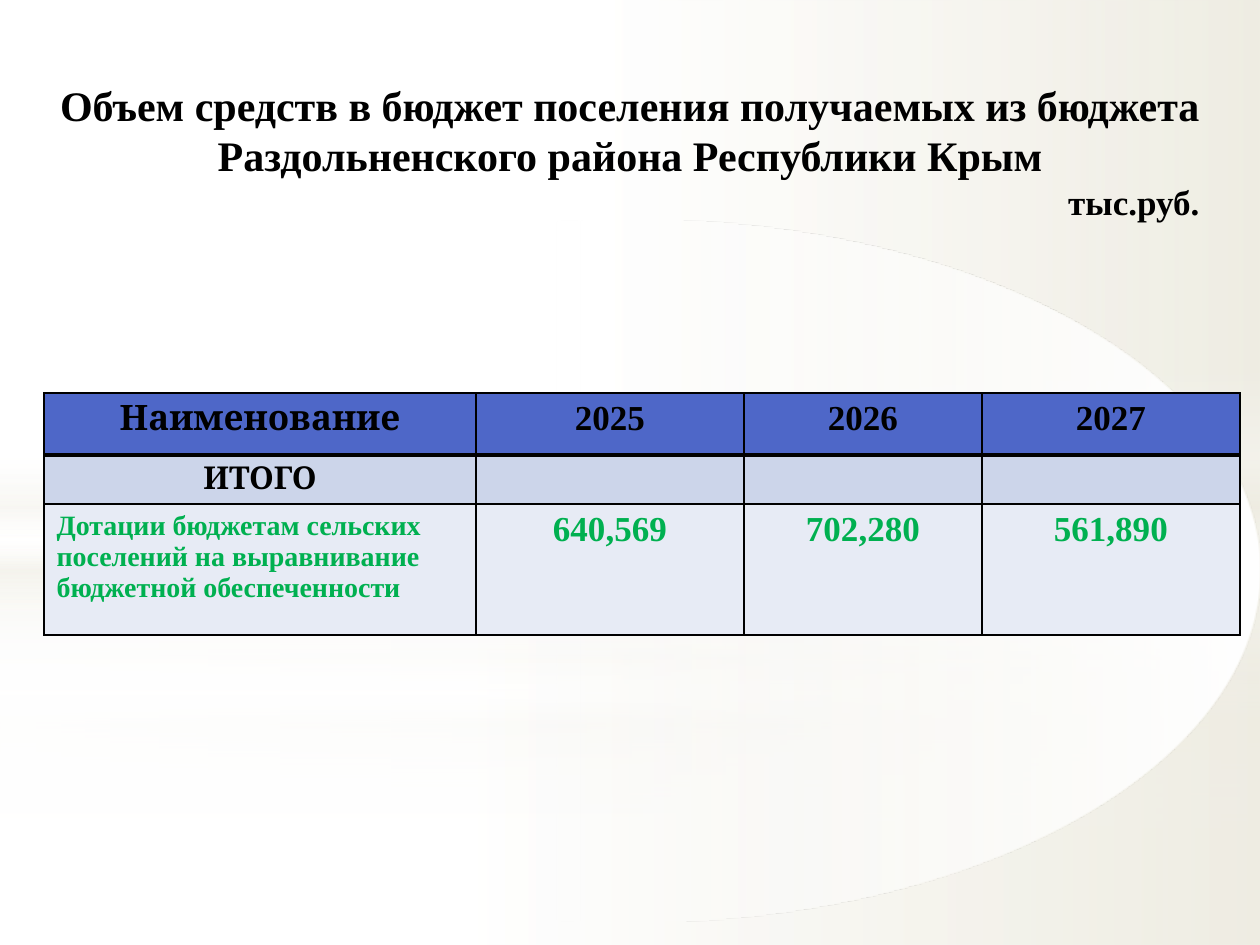
import pptx
import pptx.util
import pptx.dml.color
import pptx.enum.shapes
import pptx.enum.text
import pptx.oxml
import pptx.oxml.ns
from dataclasses import dataclass
from lxml import etree

SCALE = 914400 // 126  # EMU in one px
ALIGN = pptx.enum.text.PP_ALIGN
SHAPE = pptx.enum.shapes.MSO_SHAPE


@dataclass(frozen=True)
class Theme:
    white: str = "FFFFFF"
    cream: str = "EEECE1"
    ink: str = "000000"
    green: str = "00B050"
    header_fill: str = "4E67C8"
    total_fill: str = "CCD5EA"
    grant_fill: str = "E7EBF5"
    serif: str = "Times New Roman"
    label_font: str = "Cambria"
    title_size: int = 24
    value_size: int = 20
    total_size: int = 18
    grant_size: int = 16
    thin: float = 0.96
    thick: float = 3


THEME = Theme()


def px(length):
    return pptx.util.Emu(length * SCALE)


def rgb(value):
    return pptx.dml.color.RGBColor.from_string(value)


def style_runs(paragraph, size, color, font):
    for run in paragraph.runs:
        run.font.size = pptx.util.Pt(size)
        run.font.bold = True
        run.font.name = font
        run.font.color.rgb = rgb(color)


def add_gradient_shape(slide, kind, box, stops, angle):
    """Stops are (position %, colour, opacity %)."""
    shape = slide.shapes.add_shape(kind, *map(px, box))
    shape.shadow.inherit = False
    shape.line.fill.background()
    shape.fill.gradient()
    gradient = shape._element.spPr.find(pptx.oxml.ns.qn("a:gradFill"))
    stop_xml = "".join(
        f'<a:gs pos="{position * 1000}"><a:srgbClr val="{color}">'
        f'<a:alpha val="{opacity * 1000}"/></a:srgbClr></a:gs>'
        for position, color, opacity in stops)
    replacement = pptx.oxml.parse_xml(
        f'<a:gradFill {pptx.oxml.ns.nsdecls("a")} rotWithShape="1"><a:gsLst>{stop_xml}</a:gsLst>'
        f'<a:lin ang="{angle * 60000}" scaled="0"/></a:gradFill>')
    gradient.getparent().replace(gradient, replacement)


def add_backdrop(slide, box, horizon, band_top, lift, fade_end):
    """Two washes meeting at the horizon, a soft band and a large ellipse."""
    left, top, width, height = box
    white, cream = THEME.white, THEME.cream
    lower = [(0, white, 91 + lift), (37, white, 76 + lift), (100, cream, 79 + lift)]
    upper = [(0, white, 89 + lift), (48, white, 62 + lift), (100, cream, 79 + lift)]
    band = [(0, white, 0), (29, white, 30), (45, cream, 40),
            (55, white, 26), (65, cream, 60), (100, white, 0)]
    glow = [(0, white, 100), (fade_end, white, 0)]
    for kind, y, part_height, stops, angle in (
            (SHAPE.RECTANGLE, horizon, height - horizon, lower, 0),
            (SHAPE.RECTANGLE, 0, horizon, upper, 0),
            (SHAPE.RECTANGLE, band_top, 315, band, 90),
            (SHAPE.OVAL, 220, 703, glow, 180)):
        add_gradient_shape(slide, kind, (left, top + y, width, part_height), stops, angle)


def add_title(slide, box):
    text_frame = slide.shapes.add_textbox(*map(px, box)).text_frame
    text_frame.word_wrap = True
    text_frame.vertical_anchor = pptx.enum.text.MSO_ANCHOR.MIDDLE
    text_frame.text = ("Объем средств в бюджет поселения получаемых из бюджета "
                       "Раздольненского района Республики Крым\nтыс.руб.")
    heading, unit = text_frame.paragraphs
    heading.alignment = ALIGN.CENTER
    style_runs(heading, THEME.title_size, THEME.ink, THEME.serif)
    unit.alignment = ALIGN.RIGHT
    unit._p.get_or_add_pPr().set("marR", str(px(48)))
    style_runs(unit, THEME.value_size, THEME.ink, THEME.serif)


def set_borders(cell, top, bottom):
    properties = cell._tc.get_or_add_tcPr()
    sides = (("L", THEME.thin), ("R", THEME.thin), ("T", top), ("B", bottom))
    for index, (side, width) in enumerate(sides):
        properties.insert(index, pptx.oxml.parse_xml(
            f'<a:ln{side} {pptx.oxml.ns.nsdecls("a")} w="{pptx.util.Pt(width)}">'
            f'<a:solidFill><a:srgbClr val="{THEME.ink}"/></a:solidFill></a:ln{side}>'))


def add_budget_table(slide, box, column_widths, row_heights):
    # Each row: texts, fill, text colour, label size, label font, label alignment, top, bottom
    thin, thick = THEME.thin, THEME.thick
    rows = (
        (("Наименование", "2025", "2026", "2027"), THEME.header_fill, THEME.ink,
         THEME.value_size, THEME.label_font, ALIGN.CENTER, thin, thick),
        (("ИТОГО", "", "", ""), THEME.total_fill, THEME.ink,
         THEME.total_size, THEME.label_font, ALIGN.CENTER, thick, thin),
        (("Дотации бюджетам сельских поселений на выравнивание бюджетной обеспеченности",
          "640,569", "702,280", "561,890"), THEME.grant_fill, THEME.green,
         THEME.grant_size, THEME.serif, ALIGN.LEFT, thin, thin),
    )
    table = slide.shapes.add_table(len(rows), len(column_widths), *map(px, box)).table
    for column, width in zip(table.columns, column_widths):
        column.width = px(width)
    for row, height in zip(table.rows, row_heights):
        row.height = px(height)

    for row, (texts, fill, color, size, font, alignment, top, bottom) in zip(table.rows, rows):
        for index, (cell, text) in enumerate(zip(row.cells, texts)):
            cell.fill.solid()
            cell.fill.fore_color.rgb = rgb(fill)
            set_borders(cell, top, bottom)
            paragraph = cell.text_frame.paragraphs[0]
            if not text:  # keeps an empty cell from stretching its row
                etree.SubElement(paragraph._p, pptx.oxml.ns.qn("a:endParaRPr"), sz="1600")
                continue
            paragraph.text = text
            is_label = index == 0
            paragraph.alignment = alignment if is_label else ALIGN.CENTER
            style_runs(paragraph, size if is_label else THEME.value_size, color,
                       font if is_label else THEME.serif)


def main():
    presentation = pptx.Presentation()
    presentation.slide_width = pptx.util.Inches(10)
    presentation.slide_height = pptx.util.Inches(7.5)
    slide = presentation.slides.add_slide(presentation.slide_layouts[6])
    slide.background.fill.solid()
    slide.background.fill.fore_color.rgb = rgb(THEME.white)

    # Backdrop in two layers
    page = (0, 0, 1260, 945)
    add_backdrop(slide, page, horizon=703, band_top=519, lift=0, fade_end=56)
    add_backdrop(slide, page, horizon=533, band_top=365, lift=1, fade_end=54)

    # Table and title
    add_budget_table(slide, (44, 393, 1196, 241), (432, 268, 238, 258), (62, 48, 131))
    add_title(slide, (0, 76, 1260, 150))
    presentation.save("out.pptx")


if __name__ == "__main__":
    main()
